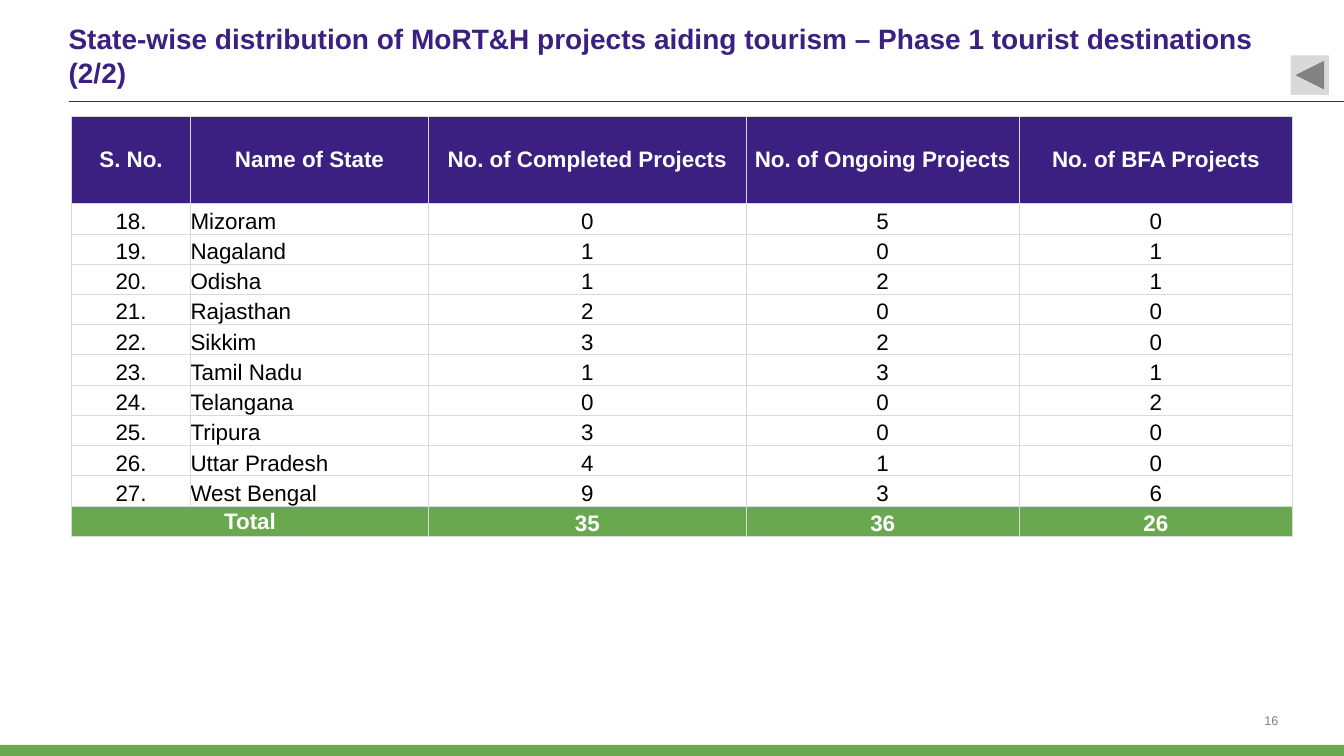
from lxml.etree import SubElement
from pptx import Presentation
from pptx.dml.color import RGBColor
from pptx.enum.shapes import MSO_CONNECTOR as Connector, MSO_SHAPE as Preset
from pptx.enum.text import MSO_ANCHOR as Anchor, MSO_AUTO_SIZE as AutoSize, PP_ALIGN as Align
from pptx.oxml.ns import qn
from pptx.util import Inches, Pt

COLORS = {
    "purple": "3B2082",
    "green": "6AA84F",
    "grid": "D9D9D9",
    "muted": "808080",
    "white": "FFFFFF",
    "black": "000000",
}
HEADERS = ["S. No.", "Name of State", "No. of Completed Projects",
           "No. of Ongoing Projects", "No. of BFA Projects"]
STATES = [
    ("Mizoram", 0, 5, 0),
    ("Nagaland", 1, 0, 1),
    ("Odisha", 1, 2, 1),
    ("Rajasthan", 2, 0, 0),
    ("Sikkim", 3, 2, 0),
    ("Tamil Nadu", 1, 3, 1),
    ("Telangana", 0, 0, 2),
    ("Tripura", 3, 0, 0),
    ("Uttar Pradesh", 4, 1, 0),
    ("West Bengal", 9, 3, 6),
]
TOTALS = ["Total", "", 35, 36, 26]
FIRST_NUMBER = 18
COLUMN_WIDTHS = [1.18, 2.36, 3.15, 2.71, 2.71]
HEADER_HEIGHT, ROW_HEIGHT = 0.87, 0.3


def rgb(color):
    return RGBColor.from_string(COLORS[color])


def apply(target, values):
    for key, value in values.items():
        setattr(target, key, value)


class SlideBuilder:
    font = "Arial"

    def __init__(self, slide):
        self.slide = slide

    def put_text(self, frame, text, size, color, bold=False, align=Align.LEFT):
        paragraph = frame.paragraphs[0]
        paragraph.text = str(text)
        paragraph.alignment = align
        apply(paragraph.font, {"name": self.font, "size": Pt(size), "bold": bold})
        paragraph.font.color.rgb = rgb(color)

    def frame(self, frame, anchor):
        apply(frame, {"margin_left": 0, "margin_right": 0, "margin_top": 0,
                      "margin_bottom": 0, "word_wrap": True,
                      "auto_size": AutoSize.NONE, "vertical_anchor": anchor})

    def title(self, text, left, top, width, height):
        title = self.slide.shapes.title
        apply(title, {"left": Inches(left), "top": Inches(top),
                      "width": Inches(width), "height": Inches(height)})
        self.frame(title.text_frame, Anchor.MIDDLE)
        self.put_text(title.text_frame, text, 20, "purple", bold=True)

    def text(self, text, left, top, width, height, size, color, align):
        box = self.slide.shapes.add_textbox(*map(Inches, (left, top, width, height)))
        self.frame(box.text_frame, Anchor.BOTTOM)
        self.put_text(box.text_frame, text, size, color, align=align)

    def rule(self, left, right, top):
        rule = self.slide.shapes.add_connector(
            Connector.STRAIGHT, *map(Inches, (left, top, right, top)))
        rule.line.color.rgb = rgb("purple")
        rule.line.width = Pt(1)
        SubElement(rule._element.spPr, qn("a:effectLst"))

    def shape(self, preset, left, top, width, height, color, rotation=0):
        shape = self.slide.shapes.add_shape(
            preset, *map(Inches, (left, top, width, height)))
        shape.shadow.inherit = False
        shape.fill.solid()
        shape.fill.fore_color.rgb = rgb(color)
        shape.line.fill.background()
        shape.rotation = rotation

    def borders(self, cell):
        properties = cell._tc.get_or_add_tcPr()
        for side in ("lnL", "lnR", "lnT", "lnB"):
            line = SubElement(properties, qn(f"a:{side}"), w=str(Pt(0.5)))
            fill = SubElement(line, qn("a:solidFill"))
            SubElement(fill, qn("a:srgbClr"), val=COLORS["grid"])

    def cell(self, cell, text, fill, color, bold, align, anchor, margin):
        self.borders(cell)
        if fill:
            cell.fill.solid()
            cell.fill.fore_color.rgb = rgb(fill)
        else:
            cell.fill.background()
        apply(cell, {"margin_left": margin, "margin_right": margin,
                     "margin_top": margin, "margin_bottom": 0,
                     "vertical_anchor": anchor})
        self.put_text(cell.text_frame, text, 16, color, bold, align)

    def table(self, rows, left, top):
        heights = [HEADER_HEIGHT] + [ROW_HEIGHT] * (len(rows) - 1)
        table = self.slide.shapes.add_table(
            len(rows), len(COLUMN_WIDTHS), Inches(left), Inches(top),
            Inches(sum(COLUMN_WIDTHS)), Inches(sum(heights))).table
        apply(table, {"first_row": False, "horz_banding": False})
        for column, width in zip(table.columns, COLUMN_WIDTHS):
            column.width = Inches(width)
        last = len(rows) - 1
        for r, (row, height) in enumerate(zip(rows, heights)):
            table.rows[r].height = Inches(height)
            fill = {0: "purple", last: "green"}.get(r)
            for c, text in enumerate(row):
                centered = r == 0 or (r == last and c == 0)
                self.cell(
                    table.cell(r, c), text, fill,
                    color="white" if fill else "black",
                    bold=bool(fill),
                    align=Align.LEFT if c == 1 and not fill else Align.CENTER,
                    anchor=Anchor.MIDDLE if centered else Anchor.BOTTOM,
                    margin=Inches(0.01) if r == 0 or c == 0 else 0)
        table.cell(last, 0).merge(table.cell(last, 1))


def main():
    deck = Presentation()
    apply(deck, {"slide_width": Inches(13.33), "slide_height": Inches(7.5)})
    builder = SlideBuilder(deck.slides.add_slide(deck.slide_layouts[5]))
    builder.rule(0.68, 13.33, 1.01)
    builder.text("16", 11.54, 7.03, 1.14, 0.19, 9, "muted", Align.RIGHT)
    builder.shape(Preset.RECTANGLE, 0, 7.39, 13.33, 0.11, "green")
    builder.title("State-wise distribution of MoRT&H projects aiding tourism – "
                  "Phase 1 tourist destinations (2/2)", 0.68, 0.12, 12.12, 0.86)
    states = [(f"{number}.", *state) for number, state in enumerate(STATES, FIRST_NUMBER)]
    builder.table([HEADERS, *states, TOTALS], 0.71, 1.15)
    builder.shape(Preset.ACTION_BUTTON_FORWARD_OR_NEXT, 12.8, 0.55, 0.38, 0.39,
                  "grid", rotation=180)
    deck.save("out.pptx")


if __name__ == "__main__":
    main()
